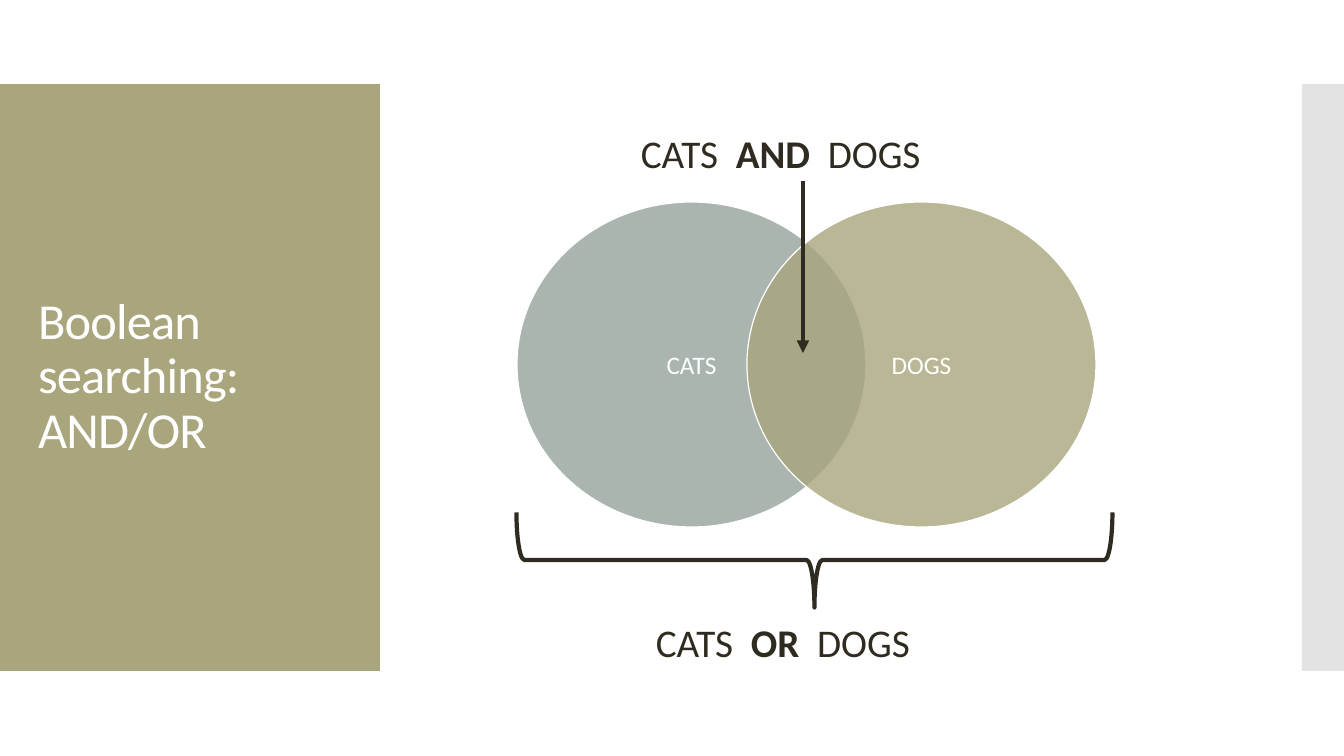
"""Build a slide that explains Boolean AND/OR searching with two overlapping circles."""
from pptx import Presentation, util as u
from pptx.dml.color import RGBColor
from pptx.enum import shapes, text
from pptx.oxml.ns import qn
from lxml import etree

SCALE = 914400 / 100.8
WIDTH, HEIGHT = 1344, 756
FONT = "Calibri"
OLIVE, SAGE, GREY, WHITE, DARK = "A9A57C", "95A39D", "C8C8C8", "FFFFFF", "2F2B20"

TITLE = "Boolean searching: AND/OR"
TITLE_BOX = (28, 124, 325, 507)
PANEL_TOP, PANEL_HEIGHT = 84, 587
PANELS = [(0, 380, OLIVE, 100), (1302, 42, GREY, 50)]
CIRCLES = [("CATS", SAGE), ("DOGS", OLIVE)]
CIRCLE_LEFT, CIRCLE_TOP, CIRCLE_WIDTH, CIRCLE_HEIGHT, CIRCLE_STEP = 517, 202, 349, 325, 230
CAPTIONS = [("AND", (631, 124, 367, 57)), ("OR", (646, 613, 337, 57))]
BRACE_BOX = (767, 262, 95, 596)
ARROW_X, ARROW_TOP, ARROW_BOTTOM = 803, 181, 353


def px(*lengths):
    return [u.Emu(round(length * SCALE)) for length in lengths]


def color(value):
    return RGBColor.from_string(value)


def style_font(font, size, value):
    font.name, font.size = FONT, u.Pt(size)
    font.color.rgb = color(value)


def add_shape(slide, kind, box, fill=None, opacity=100, line=None, line_width=0):
    shape = slide.shapes.add_shape(kind, *px(*box))
    shape.shadow.inherit = False
    if fill:
        shape.fill.solid()
        shape.fill.fore_color.rgb = color(fill)
        if opacity < 100:
            value = shape.element.spPr.find(qn("a:solidFill"))[0]
            etree.SubElement(value, qn("a:alpha"), val=str(opacity * 1000))
    else:
        shape.fill.background()
    if line:
        shape.line.color.rgb = color(line)
        shape.line.width = u.Pt(line_width)
    else:
        shape.line.fill.background()
    return shape


def add_title(slide):
    title = slide.shapes.title
    title.left, title.top, title.width, title.height = px(*TITLE_BOX)
    title.text_frame.text = TITLE
    title.text_frame.word_wrap = True
    title.text_frame.auto_size = text.MSO_AUTO_SIZE.NONE
    title.text_frame.vertical_anchor = text.MSO_ANCHOR.MIDDLE
    paragraph = title.text_frame.paragraphs[0]
    paragraph.alignment = text.PP_ALIGN.LEFT
    paragraph.line_spacing = 0.9
    style_font(paragraph.font, 36, WHITE)
    paragraph.runs[0].font._element.set("spc", "-60")
    return title


def add_circle(slide, index, label, fill):
    box = (CIRCLE_LEFT + index * CIRCLE_STEP, CIRCLE_TOP, CIRCLE_WIDTH, CIRCLE_HEIGHT)
    circle = add_shape(slide, shapes.MSO_SHAPE.OVAL, box, fill, 80, WHITE, 0.85)
    circle.text_frame.text = label
    circle.text_frame.vertical_anchor = text.MSO_ANCHOR.MIDDLE
    paragraph = circle.text_frame.paragraphs[0]
    paragraph.alignment = text.PP_ALIGN.CENTER
    style_font(paragraph.font, 18, WHITE)


def add_caption(slide, operator, box):
    caption = slide.shapes.add_textbox(*px(*box))
    caption.text_frame.word_wrap = True
    paragraph = caption.text_frame.paragraphs[0]
    style_font(paragraph.font, 28, DARK)
    for words in ("CATS  ", operator, "  DOGS"):
        run = paragraph.add_run()
        run.text = words
        style_font(run.font, 28, DARK)
        run.font.bold = words == operator


def add_arrow(slide):
    arrow = slide.shapes.add_connector(
        shapes.MSO_CONNECTOR.STRAIGHT, *px(ARROW_X, ARROW_TOP, ARROW_X, ARROW_BOTTOM))
    arrow.line.color.rgb = color(DARK)
    arrow.line.width = u.Pt(3)
    etree.SubElement(arrow.line._get_or_add_ln(), qn("a:tailEnd"), type="triangle")
    etree.SubElement(arrow._element.spPr, qn("a:effectLst"))


def main():
    presentation = Presentation()
    presentation.slide_width, presentation.slide_height = px(WIDTH, HEIGHT)
    slide = presentation.slides.add_slide(presentation.slide_layouts[5])
    title = add_title(slide)
    for left, width, fill, opacity in PANELS:
        box = (left, PANEL_TOP, width, PANEL_HEIGHT)
        panel = add_shape(slide, shapes.MSO_SHAPE.RECTANGLE, box, fill, opacity)
        title.element.addprevious(panel.element)
    for index, (label, fill) in enumerate(CIRCLES):
        add_circle(slide, index, label, fill)
    brace = add_shape(slide, shapes.MSO_SHAPE.LEFT_BRACE, BRACE_BOX, line=DARK, line_width=3)
    brace.rotation = 270
    for operator, box in CAPTIONS:
        add_caption(slide, operator, box)
    add_arrow(slide)
    presentation.save("out.pptx")


if __name__ == "__main__":
    main()
